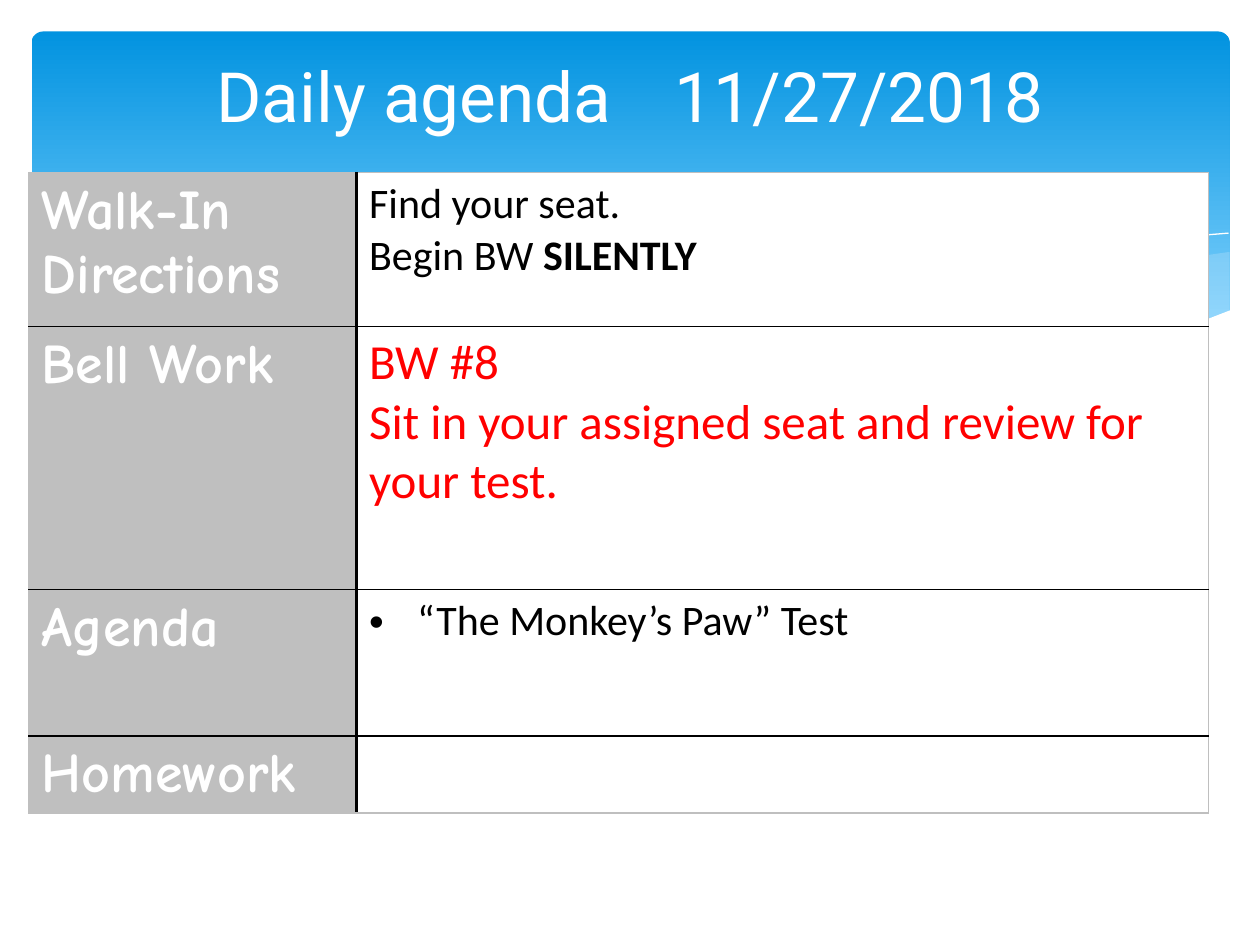
from lxml.etree import SubElement
from pptx import Presentation
from pptx.dml.color import RGBColor
from pptx.enum.shapes import MSO_SHAPE
from pptx.enum.text import MSO_ANCHOR, PP_ALIGN
from pptx.oxml.ns import qn
from pptx.util import Inches, Pt

WHITE = RGBColor(0xFF, 0xFF, 0xFF)
BLACK = RGBColor(0x00, 0x00, 0x00)
RED = RGBColor(0xFF, 0x00, 0x00)
GREY = RGBColor(0xBF, 0xBF, 0xBF)
DEEP_BLUE = RGBColor(0x02, 0x93, 0xE0)
SKY_BLUE = RGBColor(0x83, 0xD3, 0xFE)
PALE_BLUE = RGBColor(0xC6, 0xE7, 0xFC)

RIGHT_WAVE = [
    (9.75, 2), (9.48, 2.04), (9.21, 2.1), (8.91, 2.16), (8.61, 2.23), (8.05, 2.37),
    (7.53, 2.48), (7.06, 2.57), (6.61, 2.65), (6.91, 2.69), (7.19, 2.72), (7.45, 2.75),
    (7.69, 2.77), (8.03, 2.78), (8.35, 2.77), (8.63, 2.75), (8.89, 2.72), (9.13, 2.67),
    (9.35, 2.62), (9.49, 2.57), (9.63, 2.52), (9.76, 2.47), (9.76, 2),
]
MIDDLE_WAVE = [
    (8.93, 2.73), (8.66, 2.69), (8.07, 2.6), (7.41, 2.47), (6.68, 2.31), (6.29, 2.22),
    (5.98, 2.14), (5.69, 2.08), (5.41, 2.03), (5.14, 1.98), (4.89, 1.94), (4.42, 1.89),
    (3.99, 1.86), (3.61, 1.85), (3.28, 1.87), (2.86, 1.91), (3.23, 1.96), (3.62, 2.03),
    (4.04, 2.11), (4.49, 2.22), (4.91, 2.32), (5.3, 2.4), (5.66, 2.48), (6.01, 2.55),
    (6.34, 2.61), (6.65, 2.66), (6.95, 2.7), (7.22, 2.74), (7.48, 2.76), (7.73, 2.77),
    (8.07, 2.78), (8.38, 2.78), (8.67, 2.76),
]
FALLING_CURVE = [
    (3.09, 1.95), (3.28, 1.92), (3.53, 1.89), (3.87, 1.87), (4.33, 1.87), (4.69, 1.89),
    (5.1, 1.92), (5.56, 1.97), (6.08, 2.04), (6.65, 2.13), (7.27, 2.26), (7.95, 2.41),
    (8.69, 2.61), (9.07, 2.72),
]
RISING_CURVE = [
    (6.13, 2.57), (6.53, 2.46), (6.95, 2.35), (7.48, 2.23), (8.06, 2.1), (8.66, 1.99),
    (8.95, 1.94), (9.24, 1.9), (9.51, 1.87), (9.75, 1.85),
]
WHITE_WAVE = [
    (9.77, 2.46), (9.59, 2.53), (9.4, 2.59), (9.2, 2.65), (8.99, 2.69), (8.75, 2.73),
    (8.5, 2.75), (8.09, 2.77), (7.61, 2.75), (7.08, 2.7), (6.48, 2.62), (5.79, 2.5),
    (5.03, 2.33), (4.47, 2.2), (3.91, 2.07), (3.4, 1.97), (2.92, 1.9), (2.5, 1.86),
    (2.11, 1.84), (1.61, 1.84), (1.19, 1.87), (0.85, 1.93), (0.59, 1.99), (0.4, 2.05),
    (0.23, 2.13), (0.23, 3.29), (9.77, 3.29),
]


def add_text(paragraph, text, *, font, size, color, bold=False):
    run = paragraph.add_run()
    run.text = text
    run.font.name = font
    run.font.size = Pt(size)
    run.font.bold = bold
    run.font.color.rgb = color


class AgendaSlide:
    title_font = "Roboto"
    label_font = "Comic Neue"
    body_font = "Calibri"

    def __init__(self, presentation):
        self.slide = presentation.slides.add_slide(presentation.slide_layouts[5])
        self.shapes = self.slide.shapes

    def banner(self, left, top, width, height):
        shape = self.shapes.add_shape(
            MSO_SHAPE.ROUNDED_RECTANGLE,
            Inches(left), Inches(top), Inches(width), Inches(height),
        )
        shape.adjustments[0] = 0.034
        shape.shadow.inherit = False
        shape.line.fill.background()
        shape.fill.gradient()
        shape.fill.gradient_angle = 270
        stops = zip(shape.fill.gradient_stops, (0, 0.9), (DEEP_BLUE, SKY_BLUE))
        for stop, position, color in stops:
            stop.position = position
            stop.color.rgb = color

    def outline(self, shapes, points, closed):
        start, *rest = [(Inches(x), Inches(y)) for x, y in points]
        builder = shapes.build_freeform(*start)
        builder.add_line_segments(rest, close=closed)
        shape = builder.convert_to_shape()
        shape.shadow.inherit = False
        return shape

    def wave(self, shapes, points, color, opacity=100):
        shape = self.outline(shapes, points, True)
        shape.line.fill.background()
        shape.fill.solid()
        shape.fill.fore_color.rgb = color
        if opacity < 100:
            color_element = shape.element.spPr.find(qn("a:solidFill"))[0]
            SubElement(color_element, qn("a:alpha"), val=str(opacity * 1000))

    def curve(self, shapes, points):
        shape = self.outline(shapes, points, False)
        shape.fill.background()
        shape.line.color.rgb = WHITE
        shape.line.width = Pt(0)

    def title(self, text, left, top, width, height):
        shape = self.shapes.title
        shape.left, shape.top = Inches(left), Inches(top)
        shape.width, shape.height = Inches(width), Inches(height)
        shape.element.getparent().append(shape.element)
        shape.text_frame.vertical_anchor = MSO_ANCHOR.TOP
        paragraph = shape.text_frame.paragraphs[0]
        paragraph.alignment = PP_ALIGN.CENTER
        add_text(paragraph, text, font=self.title_font, size=39.6, color=WHITE)

    def border(self, cell, side, color, width):
        properties = cell._tc.get_or_add_tcPr()
        line = SubElement(properties, qn(f"a:ln{side}"), w=str(Pt(width)))
        fill = SubElement(line, qn("a:solidFill"))
        SubElement(fill, qn("a:srgbClr"), val=str(color))

    def bullet(self, paragraph):
        properties = paragraph._p.get_or_add_pPr()
        indent = Inches(0.38)
        properties.set("marL", str(indent))
        properties.set("indent", str(-indent))
        SubElement(properties, qn("a:buFont"), typeface="Arial")
        SubElement(properties, qn("a:buChar"), char="•")

    def table(self, rows, left, top, widths, heights):
        frame = self.shapes.add_table(
            len(rows), len(widths), Inches(left), Inches(top),
            Inches(sum(widths)), Inches(sum(heights)),
        )
        table = frame.table
        table.first_row = table.horz_banding = False
        for column, width in zip(table.columns, widths):
            column.width = Inches(width)
        for row, height in zip(table.rows, heights):
            row.height = Inches(height)
        for index, (label, size, color, bulleted, paragraphs) in enumerate(rows):
            label_cell, body_cell = table.cell(index, 0), table.cell(index, 1)
            top_color = BLACK if index else GREY
            bottom_color = BLACK if index < len(rows) - 1 else GREY
            for cell, left_color, right_color, fill in (
                (label_cell, GREY, BLACK, GREY),
                (body_cell, BLACK, GREY, WHITE),
            ):
                self.border(cell, "L", left_color, 1.5 if left_color == BLACK else 1)
                self.border(cell, "R", right_color, 1.5 if right_color == BLACK else 1)
                self.border(cell, "T", top_color, 1)
                self.border(cell, "B", bottom_color, 1)
                cell.fill.solid()
                cell.fill.fore_color.rgb = fill
            add_text(label_cell.text_frame.paragraphs[0], label,
                     font=self.label_font, size=32, color=WHITE, bold=True)
            text_frame = body_cell.text_frame
            for number, runs in enumerate(paragraphs):
                paragraph = text_frame.add_paragraph() if number else text_frame.paragraphs[0]
                if bulleted:
                    self.bullet(paragraph)
                for text, bold in runs:
                    add_text(paragraph, text, font=self.body_font, size=size,
                             color=color, bold=bold)


def main():
    presentation = Presentation()
    presentation.slide_width, presentation.slide_height = Inches(10), Inches(7.5)
    agenda = AgendaSlide(presentation)
    agenda.banner(0.25, 0.25, 9.51, 2.7)
    waves = agenda.shapes.add_group_shape().shapes
    agenda.wave(waves, RIGHT_WAVE, PALE_BLUE, 29)
    agenda.wave(waves, MIDDLE_WAVE, PALE_BLUE, 40)
    agenda.curve(waves, FALLING_CURVE)
    agenda.curve(waves, RISING_CURVE)
    agenda.wave(waves, WHITE_WAVE, WHITE)
    agenda.title("Daily agenda\t 11/27/2018", 0.5, 0.37, 9, 1.37)
    rows = [
        ("Walk-In Directions", 24, BLACK, False,
         [[("Find your seat.", False)], [("Begin BW ", False), ("SILENTLY", True)]]),
        ("Bell Work", 28, RED, False,
         [[("BW #8", False)],
          [("Sit in your assigned seat and review for your test.", False)]]),
        ("Agenda", 24, BLACK, True, [[("“The Monkey’s Paw” Test", False)]]),
        ("Homework", 24, BLACK, False, []),
    ]
    agenda.table(rows, 0.23, 1.37, (2.6, 6.76), (1.22, 2.09, 1.16, 0.61))
    presentation.save("out.pptx")


if __name__ == "__main__":
    main()
